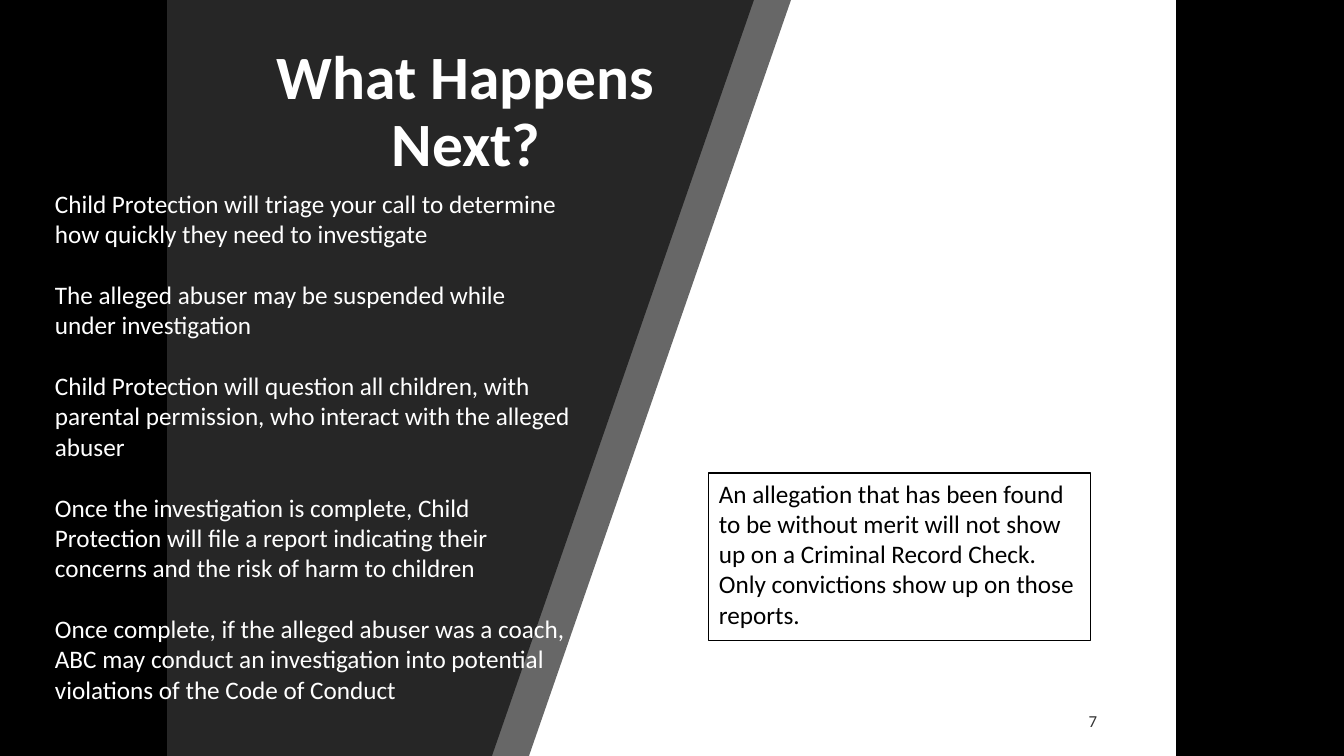
from pptx import Presentation
from pptx.dml.color import RGBColor
from pptx.enum import shapes, text
from pptx.util import Pt

TITLE = "What Happens Next?"
STEPS = [
    "Child Protection will triage your call to determine how quickly they need to investigate",
    "The alleged abuser may be suspended while under investigation",
    "Child Protection will question all children, with parental permission, "
    "who interact with the alleged abuser",
    "Once the investigation is complete, Child Protection will file a report "
    "indicating their concerns and the risk of harm to children",
    "Once complete, if the alleged abuser was a coach, ABC may conduct an "
    "investigation into potential violations of the Code of Conduct",
]
NOTE = ("An allegation that has been found to be without merit will not show up "
        "on a Criminal Record Check. Only convictions show up on those reports.")
PAGE_NUMBER = "7"

BLACK = RGBColor(0x00, 0x00, 0x00)
WHITE = RGBColor(0xFF, 0xFF, 0xFF)
CHARCOAL = RGBColor(0x26, 0x26, 0x26)
BAND_GREY = RGBColor(0x67, 0x67, 0x67)
NUMBER_GREY = RGBColor(0x33, 0x33, 0x33)

EMU_PER_PX = 914400 / 100.8
SLIDE_W, SLIDE_H = 1344, 756
PAGE_LEFT, PAGE_W = 168, 1008
# right edge at the top, right edge at the bottom, colour
SLANTED_PANELS = [(791, 529, BAND_GREY), (754, 492, CHARCOAL)]


def px(n):
    return round(n * EMU_PER_PX)


def paint(sp, fill=None, line=None):
    sp.shadow.inherit = False
    if fill is None:
        sp.fill.background()
    else:
        sp.fill.solid()
        sp.fill.fore_color.rgb = fill
    if line is None:
        sp.line.fill.background()
    else:
        sp.line.color.rgb = line
        sp.line.width = Pt(0.75)


def add_rect(slide, box, **colours):
    sp = slide.shapes.add_shape(shapes.MSO_SHAPE.RECTANGLE, *map(px, box))
    paint(sp, **colours)
    return sp


def add_panel(slide, top_right, bottom_right, fill):
    """Draw a full-height panel with a slanted right edge."""
    builder = slide.shapes.build_freeform(top_right, 0, scale=EMU_PER_PX)
    builder.add_line_segments(
        [(PAGE_LEFT, 0), (PAGE_LEFT, SLIDE_H), (bottom_right, SLIDE_H)], close=True)
    paint(builder.convert_to_shape(), fill=fill)


def write(sp, lines, size, color, align=text.PP_ALIGN.LEFT,
          anchor=text.MSO_ANCHOR.TOP, bold=False, gap=0, spacing=None):
    tf = sp.text_frame
    tf.word_wrap = True
    tf.vertical_anchor = anchor
    tf.text = "\n".join(lines)
    for i, p in enumerate(tf.paragraphs):
        p.alignment = align
        p.line_spacing = spacing
        p.space_before = Pt(gap if i else 0)
        font = p.runs[0].font
        font.name, font.size, font.bold = "Calibri", Pt(size), bold
        font.color.rgb = color


def add_text(slide, box, lines, size, color, **style):
    write(slide.shapes.add_textbox(*map(px, box)), lines, size, color, **style)


def main():
    prs = Presentation()
    prs.slide_width, prs.slide_height = px(SLIDE_W), px(SLIDE_H)
    slide = prs.slides.add_slide(prs.slide_layouts[6])
    slide.background.fill.solid()
    slide.background.fill.fore_color.rgb = BLACK

    add_rect(slide, (PAGE_LEFT, 0, PAGE_W, SLIDE_H), fill=WHITE)
    for panel in SLANTED_PANELS:
        add_panel(slide, *panel)

    middle = text.MSO_ANCHOR.MIDDLE
    add_text(slide, (237, 40, 458, 146), [TITLE], 44, WHITE, bold=True,
             align=text.PP_ALIGN.CENTER, anchor=middle, spacing=0.9)
    add_text(slide, (1015, 701, 92, 40), [PAGE_NUMBER], 12, NUMBER_GREY,
             align=text.PP_ALIGN.RIGHT, anchor=middle)
    add_text(slide, (45, 183, 535, 529), STEPS, 18, WHITE, gap=22)
    note = add_rect(slide, (709, 473, 382, 168), line=BLACK)
    write(note, [NOTE], 18, BLACK)

    prs.save("out.pptx")


if __name__ == "__main__":
    main()
